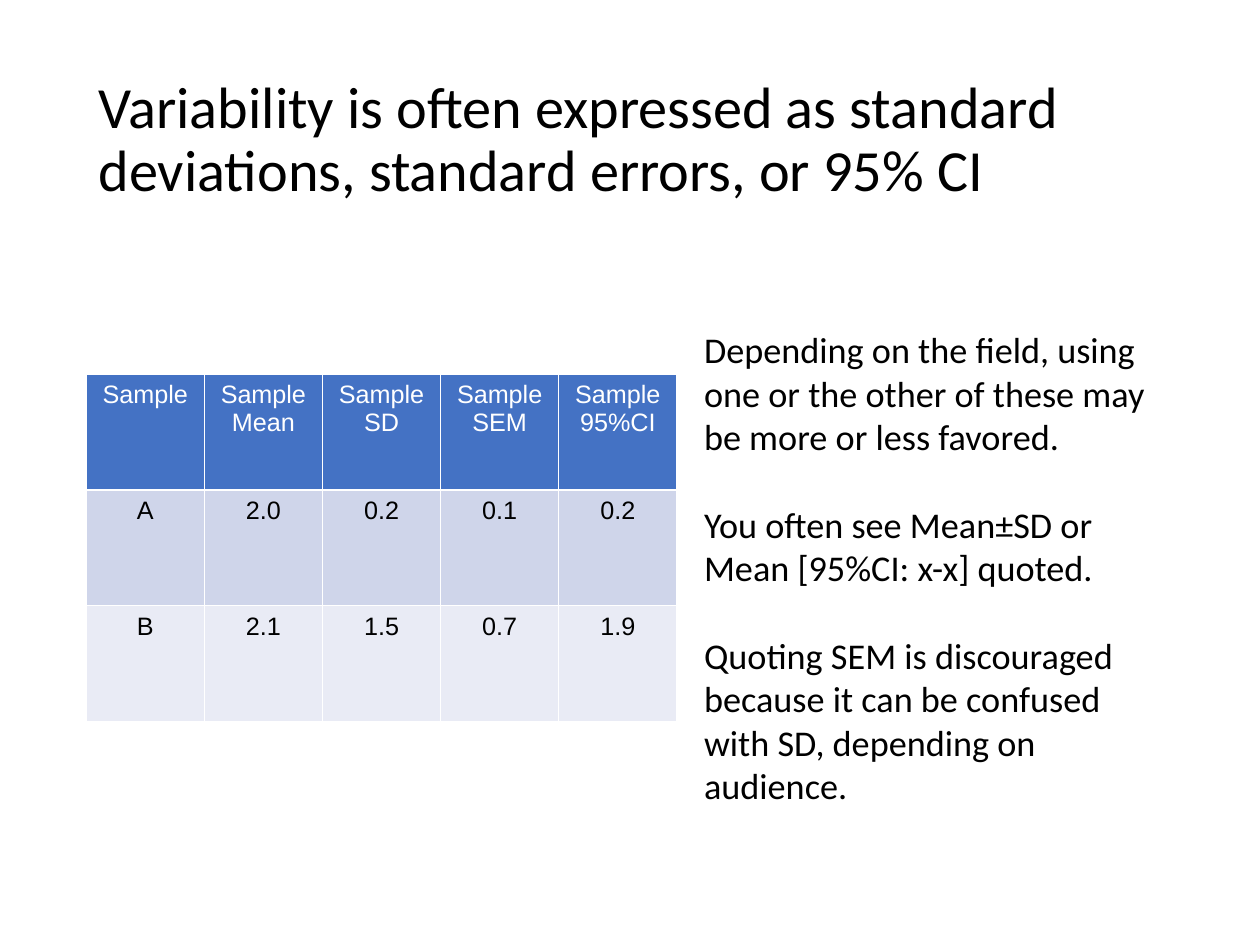
from pptx import Presentation
from pptx.dml.color import RGBColor
from pptx.enum.text import MSO_ANCHOR, MSO_AUTO_SIZE, PP_ALIGN
from pptx.util import Inches, Pt

TITLE = "Variability is often expressed as standard deviations, standard errors, or 95% CI"
NOTES = [
    "Depending on the field, using one or the other of these may be more or less favored.",
    "You often see Mean±SD or Mean [95%CI: x-x] quoted.",
    "Quoting SEM is discouraged because it can be confused with SD, depending on audience.",
]
ROWS = [
    ["Sample", "Sample Mean", "Sample\nSD", "Sample\nSEM", "Sample 95%CI"],
    ["A", "2.0", "0.2", "0.1", "0.2"],
    ["B", "2.1", "1.5", "0.7", "1.9"],
]
COLORS = {"text": "000000", "light": "FFFFFF", "head": "4472C4", "odd": "CFD5EA", "even": "E9EBF5"}
FILLS = ["head", "odd", "even"]


def write(frame, text, size, font="Calibri", color="text", align=PP_ALIGN.LEFT, line=1.0, gap=0):
    frame.word_wrap = True
    frame.text = text
    for para in frame.paragraphs:
        para.alignment = align
        para.line_spacing = line
        para.space_before = Pt(0)
        para.space_after = Pt(gap)
        for run in para.runs:
            run.font.size = Pt(size)
            run.font.name = font
            run.font.color.rgb = RGBColor.from_string(COLORS[color])


def place(shape, left, top, width, height):
    shape.left, shape.top = Inches(left), Inches(top)
    shape.width, shape.height = Inches(width), Inches(height)


deck = Presentation()
deck.slide_width, deck.slide_height = Inches(11.11), Inches(8.33)
slide = deck.slides.add_slide(deck.slide_layouts[5])

title = slide.shapes.title
place(title, 0.76, 0.44, 9.58, 1.61)
frame = title.text_frame
frame.margin_left = frame.margin_right = frame.margin_top = frame.margin_bottom = Inches(0.11)
frame.vertical_anchor = MSO_ANCHOR.MIDDLE
frame.auto_size = MSO_AUTO_SIZE.NONE
write(frame, TITLE, 37, line=0.9)

grid = slide.shapes.add_table(
    len(ROWS), len(ROWS[0]), Inches(0.76), Inches(3.3), Inches(5.21), Inches(3.06)
).table
for r, row in enumerate(ROWS):
    for c, text in enumerate(row):
        cell = grid.cell(r, c)
        cell.fill.solid()
        cell.fill.fore_color.rgb = RGBColor.from_string(COLORS[FILLS[r]])
        cell.margin_left = cell.margin_right = Inches(0.11)
        cell.margin_top = cell.margin_bottom = Inches(0.06)
        write(cell.text_frame, text, 16, font="Arial",
              color="text" if r else "light", align=PP_ALIGN.CENTER)
        for para in cell.text_frame.paragraphs:
            para.font.bold = False
            for run in para.runs:
                run.font.bold = False

notes = slide.shapes.add_textbox(Inches(6.11), Inches(2.84), Inches(4.24), Inches(4.36))
write(notes.text_frame, "\n".join(NOTES), 23, gap=28)

deck.save("out.pptx")
